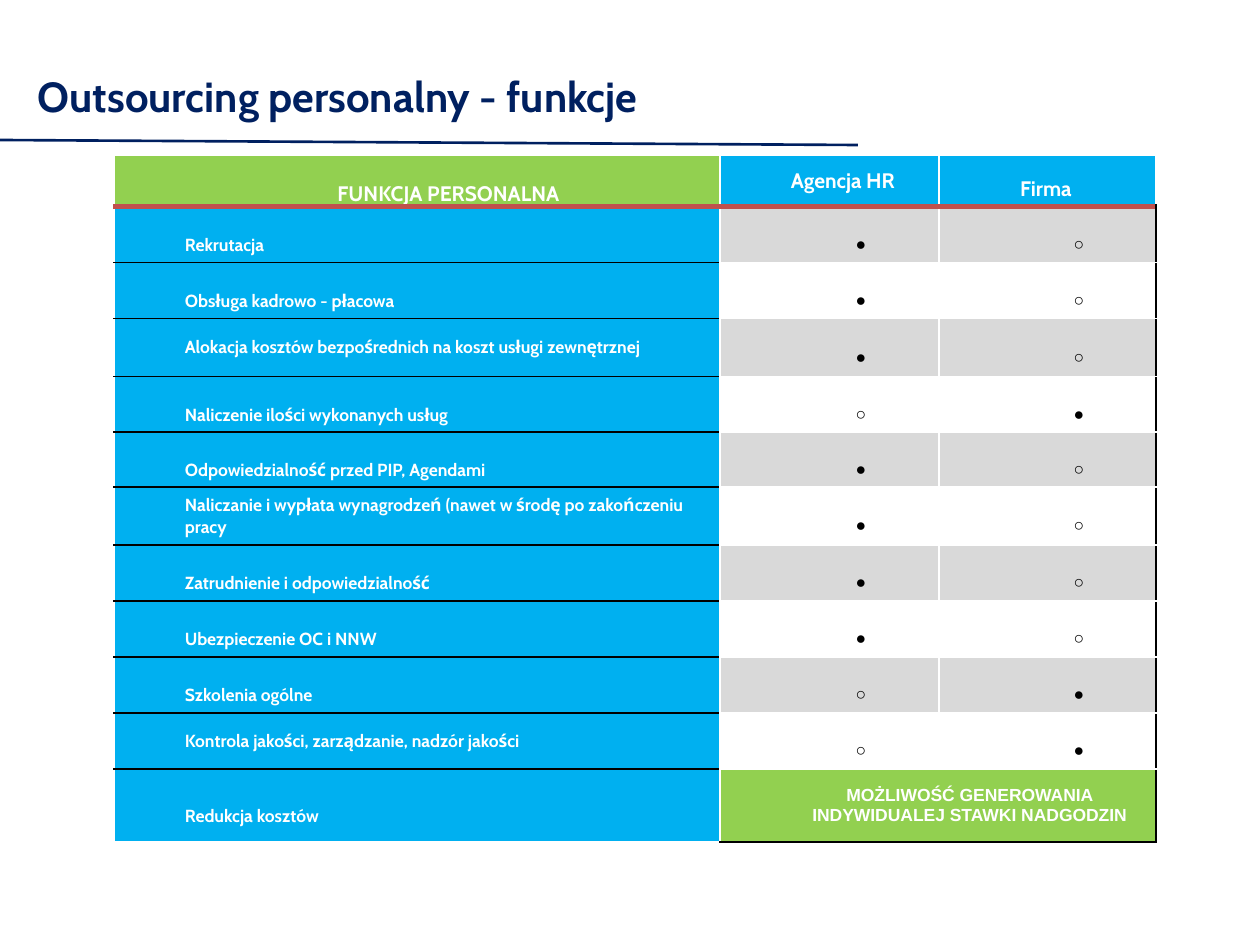
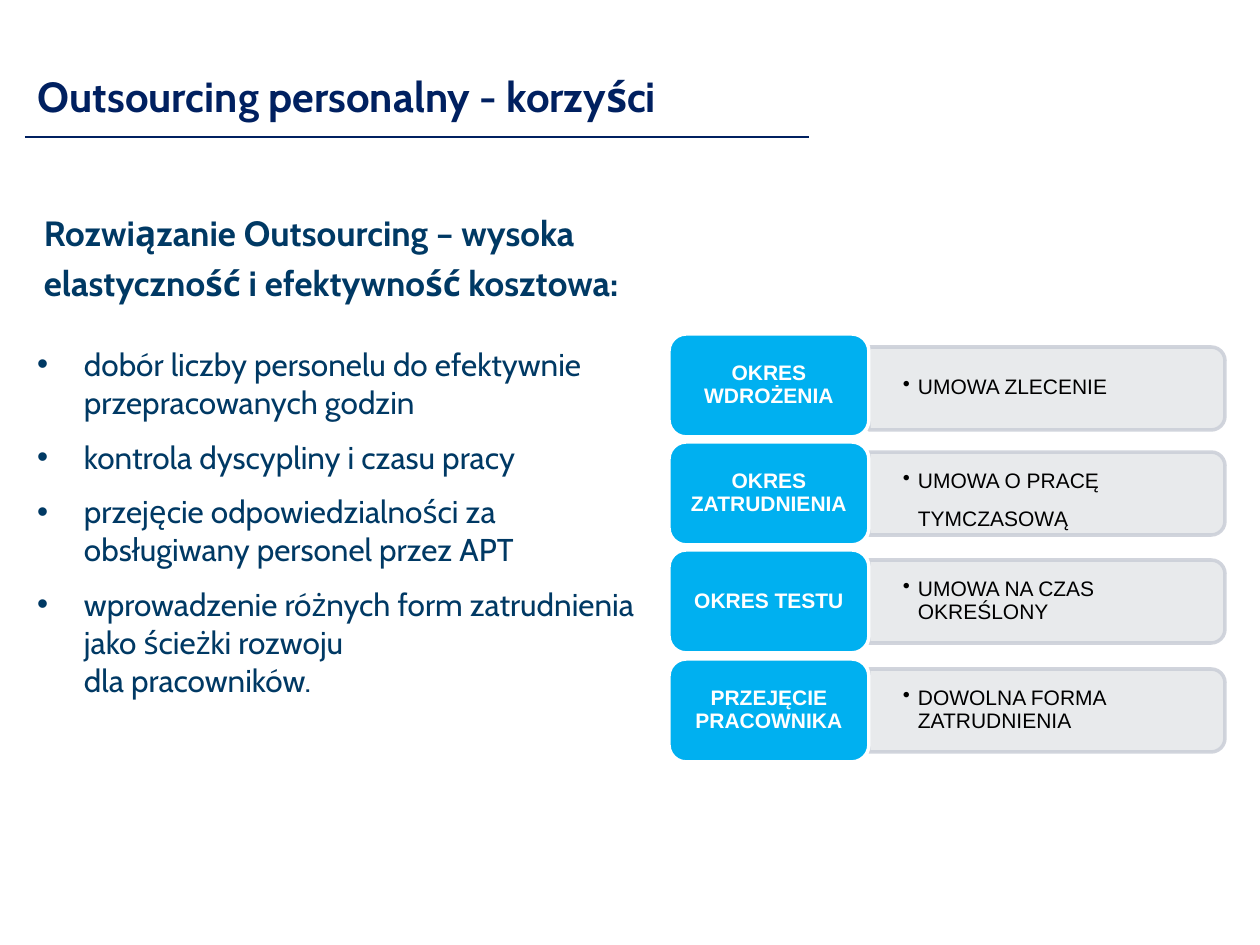
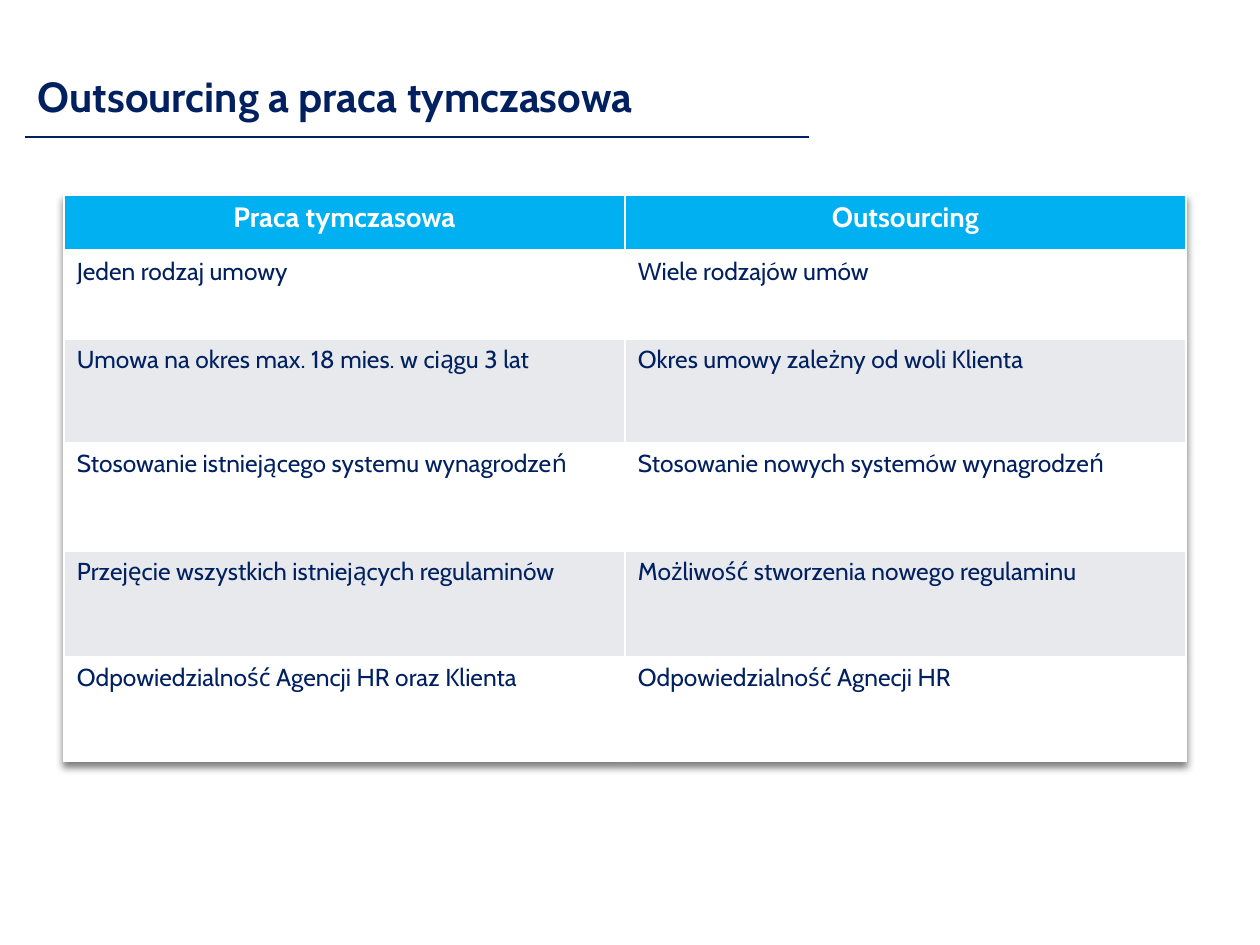
from copy import deepcopy
from itertools import product

from lxml import etree
from pptx import Presentation, util as u
from pptx.dml.color import RGBColor
from pptx.enum import shapes, text
from pptx.oxml.ns import qn

NAVY, INK, SKY, GREEN = "002060", "003964", "00B0F0", "92D050"
WHITE, BLACK, RED, SILVER = "FFFFFF", "000000", "C0504D", "D9D9D9"
PALE, MIST, EDGE = "E7E9ED", "E6E8EA", "CCD0D9"
LEFT, CENTER = text.PP_ALIGN.LEFT, text.PP_ALIGN.CENTER
TOP, MIDDLE = text.MSO_ANCHOR.TOP, text.MSO_ANCHOR.MIDDLE
SCALE = 914400 / 126


def px(length):
    return u.Emu(round(length * SCALE))


def rgb(value):
    return RGBColor.from_string(value)


def node(parent, tag, **attributes):
    return etree.SubElement(parent, qn(tag), {k: str(v) for k, v in attributes.items()})


def write(frame, content, size=12, font="Cabin", color=BLACK, bold=False, align=LEFT,
          spacing=1.0, gap=0, margin=0, hang=0, bullet=None):
    lines = [content] if isinstance(content, str) else content
    for index, line in enumerate(lines):
        paragraph = frame.add_paragraph() if index else frame.paragraphs[0]
        paragraph.text = line
        properties = paragraph._p.get_or_add_pPr()
        properties.set("marL", str(px(margin)))
        properties.set("indent", str(px(-hang)))
        if bullet:
            node(properties, "a:buChar", char=bullet)
        paragraph.alignment = align
        paragraph.line_spacing = spacing
        paragraph.space_before = u.Pt(gap if index else 0)
        for run in paragraph.runs:
            run.font.size, run.font.name, run.font.bold = u.Pt(size), font, bold
            run.font.color.rgb = rgb(color)
        for line_break in paragraph._p.findall(qn("a:br")):
            line_break.insert(0, deepcopy(paragraph.runs[0]._r.rPr))


class Deck:
    def __init__(self):
        self.prs = Presentation()
        self.prs.slide_width, self.prs.slide_height = px(1260), px(945)
        self.slide = None

    def new_slide(self, title, rule=(25, 137, 809, 137), layout=5):
        self.slide = self.prs.slides.add_slide(self.prs.slide_layouts[layout])
        heading = self.slide.shapes.title
        self.place(heading, 25, 55, 927, 81)
        self.setup(heading.text_frame, MIDDLE)
        write(heading.text_frame, title, size=24, color=NAVY, bold=True)
        self.line(*rule)

    def place(self, shape, x, y, width, height):
        shape.left, shape.top, shape.width, shape.height = map(px, (x, y, width, height))

    def setup(self, frame, anchor=TOP, inset=(13, 6)):
        frame.word_wrap = True
        frame.auto_size = text.MSO_AUTO_SIZE.NONE
        frame.vertical_anchor = anchor
        frame.margin_left = frame.margin_right = px(inset[0])
        frame.margin_top = frame.margin_bottom = px(inset[1])

    def line(self, x1, y1, x2, y2):
        rule = self.slide.shapes.add_connector(
            shapes.MSO_CONNECTOR.STRAIGHT, px(x1), px(y1), px(x2), px(y2))
        rule.line.color.rgb, rule.line.width = rgb(NAVY), u.Pt(1.5)
        node(rule._element.spPr, "a:effectLst")

    def body(self, x, y, width, height, items, **fmt):
        listing = self.slide.placeholders[1]
        self.place(listing, x, y, width, height)
        self.setup(listing.text_frame)
        write(listing.text_frame, items, **fmt)

    def text(self, x, y, width, height, content, anchor=TOP, inset=(13, 6), **fmt):
        box = self.slide.shapes.add_textbox(px(x), px(y), px(width), px(height))
        self.setup(box.text_frame, anchor, inset)
        write(box.text_frame, content, **fmt)

    def shape(self, kind, x, y, width, height, fill, edge, turn=0, opacity=None):
        if turn:
            x, y = x + (width - height) / 2, y + (height - width) / 2
            width, height = height, width
        shape = self.slide.shapes.add_shape(kind, px(x), px(y), px(width), px(height))
        shape.rotation = turn
        shape.shadow.inherit = False
        shape.fill.solid()
        shape.fill.fore_color.rgb = rgb(fill)
        shape.line.color.rgb, shape.line.width = rgb(edge), u.Pt(2)
        if opacity:
            for tint in shape._element.spPr.iter(qn("a:srgbClr")):
                node(tint, "a:alpha", val=opacity * 1000)
        return shape

    def table(self, x, y, widths, heights):
        frame = self.slide.shapes.add_table(
            len(heights), len(widths), px(x), px(y), px(sum(widths)), px(sum(heights)))
        table = frame.table
        table.first_row = table.horz_banding = False
        for column, width in zip(table.columns, widths):
            column.width = px(width)
        for row, height in zip(table.rows, heights):
            row.height = px(height)
        return table

    def cell(self, cell, content, fill, borders, anchor=TOP, inset=(13, 6), **fmt):
        properties = cell._tc.get_or_add_tcPr()
        for side in "LRTB":
            if side in borders:
                color, weight = borders[side]
                edge = node(properties, f"a:ln{side}", w=u.Pt(weight))
                node(node(edge, "a:solidFill"), "a:srgbClr", val=color)
        cell.fill.solid()
        cell.fill.fore_color.rgb = rgb(fill)
        cell.vertical_anchor = anchor
        cell.margin_left = cell.margin_right = px(inset[0])
        cell.margin_top = cell.margin_bottom = px(inset[1])
        write(cell.text_frame, content, **fmt)


def functions_slide(deck):
    deck.new_slide("Outsourcing personalny - funkcje", rule=(0, 140, 858, 145))
    duties = [
        ("Rekrutacja", 2, True),
        ("Obsługa kadrowo - płacowa", 2, True),
        ("Alokacja kosztów bezpośrednich na koszt usługi zewnętrznej", 1, True),
        ("Naliczenie ilości wykonanych usług", 2, False),
        ("Odpowiedzialność przed PIP, Agendami", 2, True),
        ("Naliczanie i wypłata wynagrodzeń (nawet w środę po zakończeniu pracy", 1, True),
        ("Zatrudnienie i odpowiedzialność", 2, True),
        ("Ubezpieczenie OC i NNW", 2, True),
        ("Szkolenia ogólne", 2, False),
        ("Kontrola jakości, zarządzanie, nadzór jakości", 1, False),
    ]
    heights = [51, 56, 56, 58, 56, 55, 58, 56, 56, 56, 56, 73]
    matrix = deck.table(114, 155, [606, 219, 217], heights)
    layout = dict(anchor=MIDDLE, inset=(8, 0), margin=63, bold=True)
    white, black, red = (WHITE, 1), (BLACK, 1), (RED, 3)

    headers = [("FUNKCJA PERSONALNA", GREEN, CENTER, 2), ("Agencja HR", SKY, LEFT, 1),
               ("", SKY, LEFT, 1)]
    for column, (label, fill, align, spacing) in enumerate(headers):
        deck.cell(matrix.cell(0, column), label, fill, {"B": red}, color=WHITE,
                  align=align, spacing=spacing, **layout)

    for row, (duty, spacing, by_agency) in enumerate(duties, 1):
        above = red if row == 1 else None
        deck.cell(matrix.cell(row, 0), duty, SKY,
                  {"R": white, "T": above or black, "B": black},
                  size=10, color=WHITE, spacing=spacing, **layout)
        for column, filled, right in ((1, by_agency, white), (2, not by_agency, black)):
            deck.cell(matrix.cell(row, column), "●" if filled else "○",
                      SILVER if row % 2 else WHITE,
                      {"L": white, "R": right, "T": above or white, "B": white},
                      size=10, font="Arial", align=CENTER, spacing=2, **layout)

    last = len(duties) + 1
    deck.cell(matrix.cell(last, 0), "Redukcja kosztów", SKY, {"R": white, "T": black},
              size=10, color=WHITE, spacing=2, **layout)
    matrix.cell(last, 1).merge(matrix.cell(last, 2))
    deck.cell(matrix.cell(last, 1), "MOŻLIWOŚĆ GENEROWANIA INDYWIDUALEJ STAWKI NADGODZIN",
              GREEN, {"L": white, "R": black, "T": white, "B": black},
              size=10, font="Arial", color=WHITE, align=CENTER, **layout)
    deck.text(1007, 165, 170, 21, "Firma", color=WHITE, bold=True, spacing=1.2)


def benefits_slide(deck):
    deck.new_slide("Outsourcing personalny - korzyści", layout=1)
    stages = [
        ("OKRES WDROŻENIA", "UMOWA ZLECENIE", 13, 0.9),
        ("OKRES ZATRUDNIENIA", "UMOWA O PRACĘ TYMCZASOWĄ", 10, 1.5),
        ("OKRES TESTU", "UMOWA NA CZAS OKREŚLONY", 10, 0.9),
        ("PRZEJĘCIE PRACOWNIKA", "DOWOLNA FORMA ZATRUDNIENIA", 10, 0.9),
    ]
    for index, (stage, contract, drop, spacing) in enumerate(stages):
        top = 334 + index * 325 // 3
        deck.shape(shapes.MSO_SHAPE.ROUND_2_SAME_RECTANGLE, 869, top + drop, 356, 83,
                   MIST, EDGE, turn=90, opacity=90)
        deck.text(869, top + drop + 4, 352, 74, contract, anchor=MIDDLE, inset=(34, 18),
                  font="Arial", spacing=spacing, margin=15, hang=15, bullet="•")
        tile = deck.shape(shapes.MSO_SHAPE.ROUNDED_RECTANGLE, 669, top, 200, 103, SKY, WHITE)
        deck.setup(tile.text_frame, MIDDLE, (11, 9))
        write(tile.text_frame, stage, font="Arial", color=WHITE, bold=True,
              align=CENTER, spacing=0.9)

    deck.body(24, 339, 634, 425, [
        "dobór liczby personelu do efektywnie przepracowanych godzin",
        "kontrola dyscypliny i czasu pracy",
        "przejęcie odpowiedzialności za obsługiwany personel przez APT",
        "wprowadzenie różnych form zatrudnienia jako ścieżki rozwoju\vdla pracowników.",
    ], size=18, color=INK, gap=9.7, margin=47, hang=47, bullet="•")
    deck.text(31, 197, 922, 69,
              "Rozwiązanie Outsourcing – wysoka\velastyczność i efektywność kosztowa:",
              size=20, color=INK, bold=True, spacing=1.2)


def comparison_slide(deck):
    deck.new_slide("Outsourcing a praca tymczasowa")
    rows = [
        ("Praca tymczasowa", "Outsourcing"),
        ("Jeden rodzaj umowy", "Wiele rodzajów umów"),
        ("Umowa na okres max. 18 mies. w ciągu 3 lat", "Okres umowy zależny od woli Klienta"),
        ("Stosowanie istniejącego systemu wynagrodzeń", "Stosowanie nowych systemów wynagrodzeń"),
        ("Przejęcie wszystkich istniejących regulaminów", "Możliwość stworzenia nowego regulaminu"),
        ("Odpowiedzialność Agencji HR oraz Klienta", "Odpowiedzialność Agnecji HR"),
    ]
    comparison = deck.table(64, 195, [561, 561], [56, 88, 104, 108, 106, 104])
    effects = etree.Element(qn("a:effectLst"))
    shadow = node(effects, "a:outerShdw", blurRad=50800, dist=38100, dir=5400000)
    node(node(shadow, "a:srgbClr", val=BLACK), "a:alpha", val=50000)
    comparison._tbl.tblPr.insert(0, effects)

    header = dict(size=16, color=WHITE, bold=True, align=CENTER)
    entry = dict(size=14, color=NAVY)
    for row, column in product(range(len(rows)), range(2)):
        borders = dict.fromkeys("LRTB", (WHITE, 1))
        if row < 2:
            borders["T" if row else "B"] = (WHITE, 3)
        fill = SKY if row == 0 else WHITE if row % 2 else PALE
        deck.cell(comparison.cell(row, column), rows[row][column], fill, borders,
                  **(entry if row else header))


def main():
    deck = Deck()
    functions_slide(deck)
    benefits_slide(deck)
    comparison_slide(deck)
    deck.prs.save("out.pptx")


if __name__ == "__main__":
    main()
